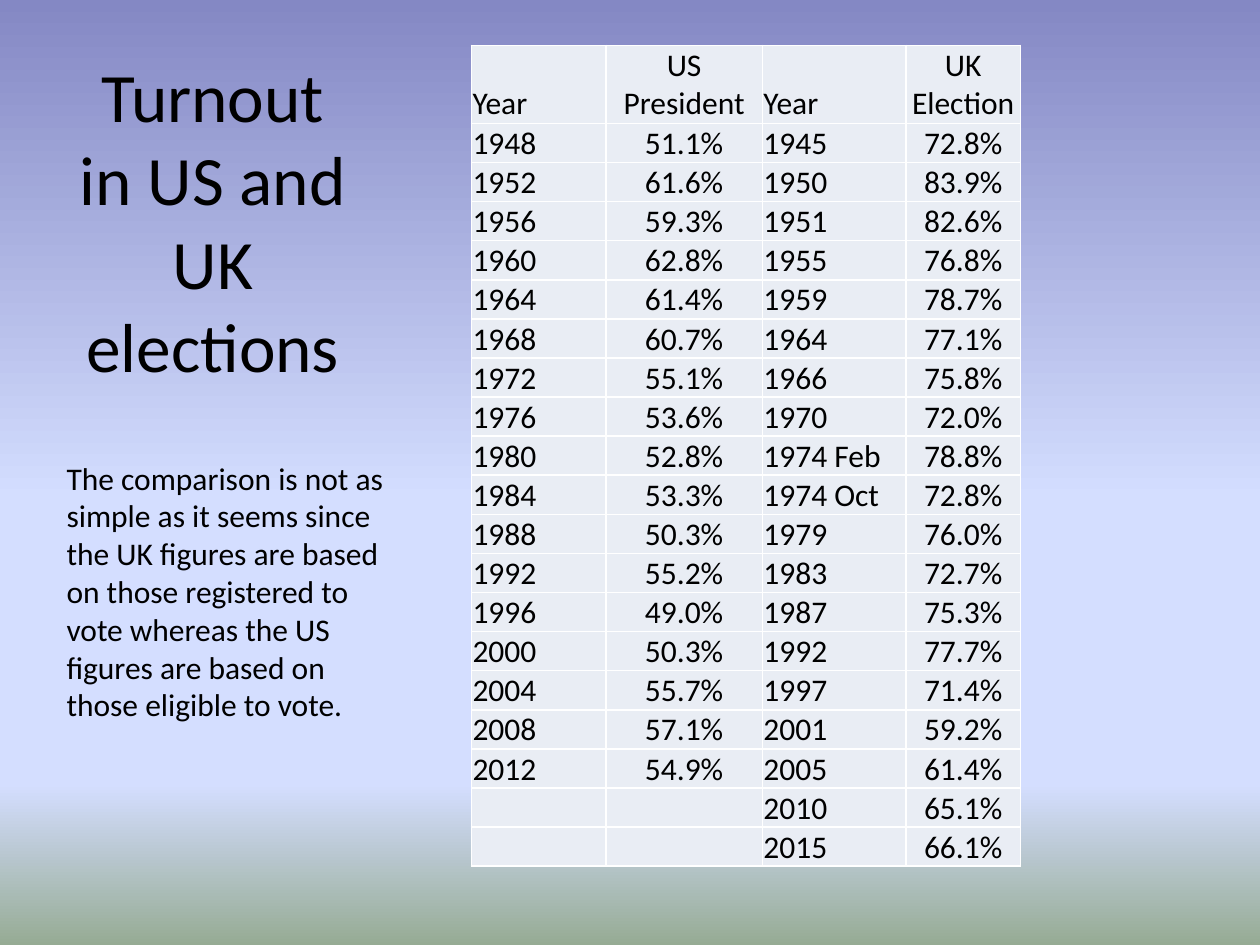
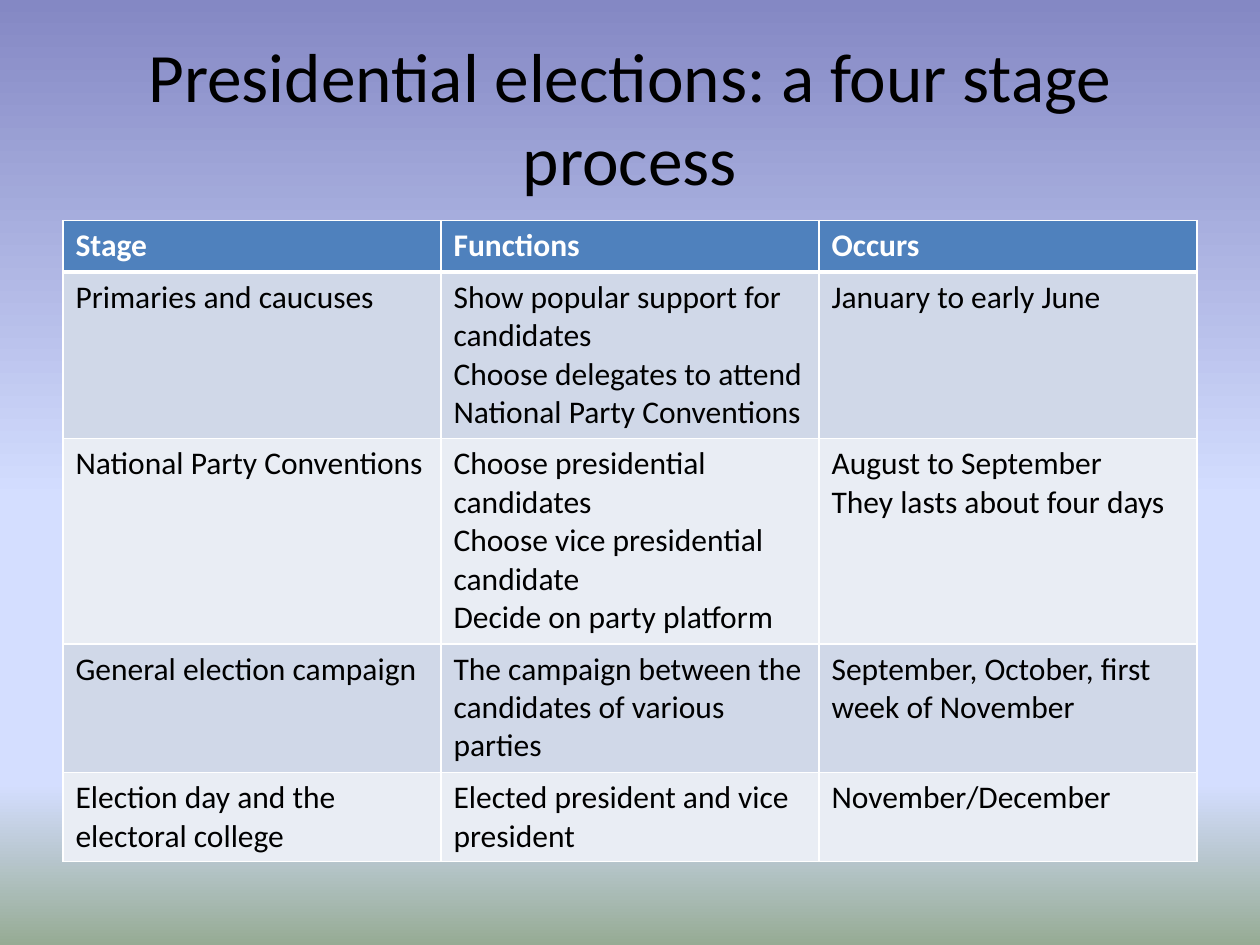
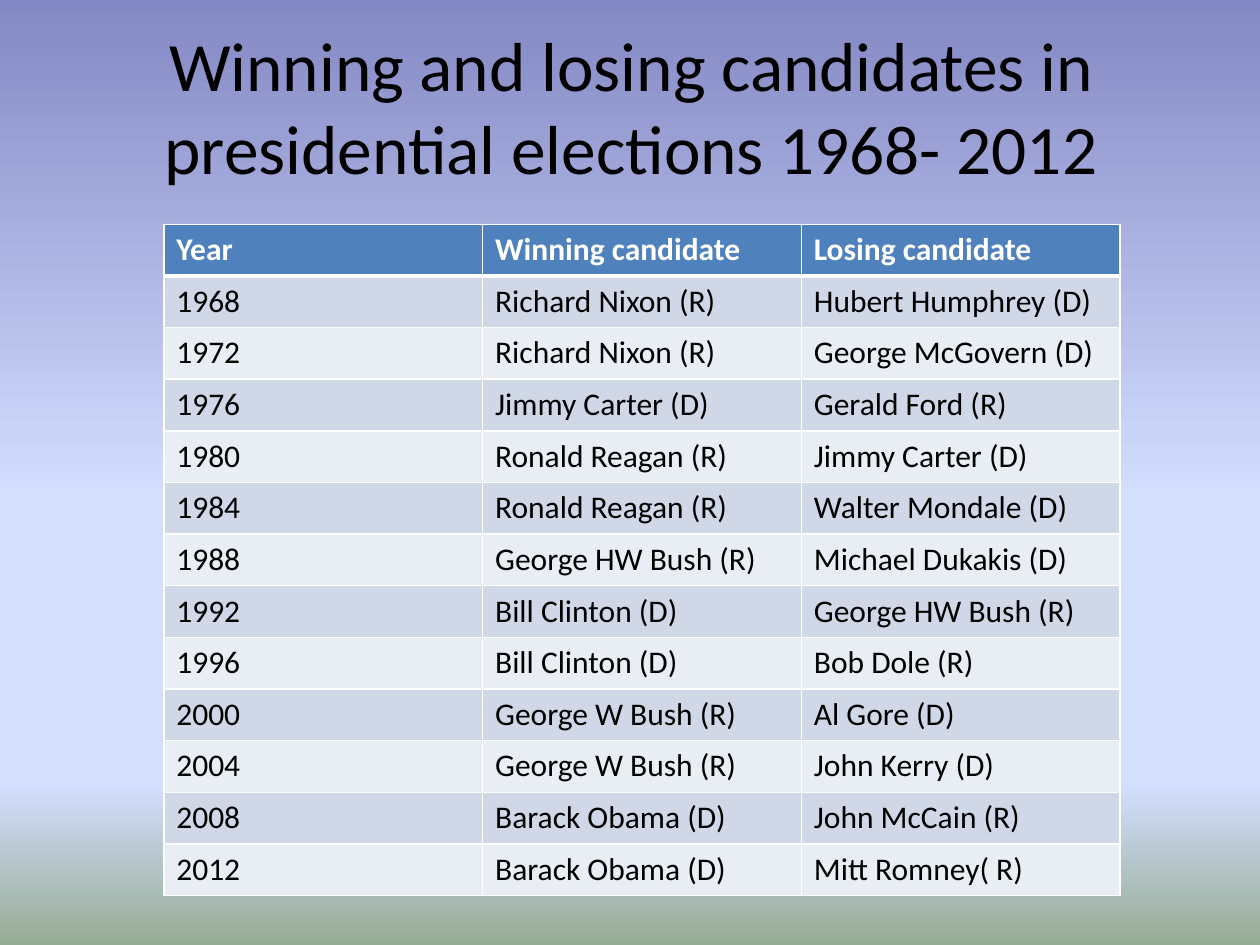
from lxml import etree
from pptx import Presentation
from pptx.dml.color import RGBColor
from pptx.enum.text import MSO_ANCHOR, PP_ALIGN
from pptx.oxml.ns import qn
from pptx.util import Inches, Pt

LEFT, CENTER = PP_ALIGN.LEFT, PP_ALIGN.CENTER
TOP, MIDDLE, BOTTOM = MSO_ANCHOR.TOP, MSO_ANCHOR.MIDDLE, MSO_ANCHOR.BOTTOM

FONT = "Calibri"
TITLE_SIZE, BODY_SIZE = 39.6, 18
BLACK, WHITE = "000000", "FFFFFF"
HEADER_FILL, DARK_BAND, LIGHT_BAND = "4F81BD", "D0D8E8", "E9EDF4"
SKY = [(0, "8488C4"), (53, "D4DEFF"), (83, "D4DEFF"), (100, "96AB94")]

TURNOUT_TITLE = "Turnout in US and UK elections"
TURNOUT_NOTE = (
    "The comparison is not as simple as it seems since the UK figures are based "
    "on those registered to vote whereas the US figures are based on those "
    "eligible to vote."
)
TURNOUT = [
    ("Year", "US President", "Year", "UK Election"),
    ("1948", "51.1%", "1945", "72.8%"),
    ("1952", "61.6%", "1950", "83.9%"),
    ("1956", "59.3%", "1951", "82.6%"),
    ("1960", "62.8%", "1955", "76.8%"),
    ("1964", "61.4%", "1959", "78.7%"),
    ("1968", "60.7%", "1964", "77.1%"),
    ("1972", "55.1%", "1966", "75.8%"),
    ("1976", "53.6%", "1970", "72.0%"),
    ("1980", "52.8%", "1974 Feb", "78.8%"),
    ("1984", "53.3%", "1974 Oct", "72.8%"),
    ("1988", "50.3%", "1979", "76.0%"),
    ("1992", "55.2%", "1983", "72.7%"),
    ("1996", "49.0%", "1987", "75.3%"),
    ("2000", "50.3%", "1992", "77.7%"),
    ("2004", "55.7%", "1997", "71.4%"),
    ("2008", "57.1%", "2001", "59.2%"),
    ("2012", "54.9%", "2005", "61.4%"),
    ("", "", "2010", "65.1%"),
    ("", "", "2015", "66.1%"),
]

STAGES_TITLE = "Presidential elections: a four stage process"
STAGES = [
    ("Stage", "Functions", "Occurs"),
    (
        "Primaries and caucuses",
        "Show popular support for candidates\n"
        "Choose delegates to attend National Party Conventions",
        "January to early June",
    ),
    (
        "National Party Conventions",
        "Choose presidential candidates\n"
        "Choose vice presidential candidate\n"
        "Decide on party platform",
        "August to September\nThey lasts about four days",
    ),
    (
        "General election campaign",
        "The campaign between the candidates of various parties",
        "September, October, first week of November",
    ),
    (
        "Election day and the electoral college",
        "Elected president and vice president",
        "November/December",
    ),
]

CANDIDATES_TITLE = "Winning and losing candidates in presidential elections 1968- 2012"
CANDIDATES = [
    ("Year", "Winning candidate", "Losing candidate"),
    ("1968", "Richard Nixon (R)", "Hubert Humphrey (D)"),
    ("1972", "Richard Nixon (R)", "George McGovern (D)"),
    ("1976", "Jimmy Carter (D)", "Gerald Ford (R)"),
    ("1980", "Ronald Reagan (R)", "Jimmy Carter (D)"),
    ("1984", "Ronald Reagan (R)", "Walter Mondale (D)"),
    ("1988", "George HW Bush (R)", "Michael Dukakis (D)"),
    ("1992", "Bill Clinton (D)", "George HW Bush (R)"),
    ("1996", "Bill Clinton (D)", "Bob Dole (R)"),
    ("2000", "George W Bush (R)", "Al Gore (D)"),
    ("2004", "George W Bush (R)", "John Kerry (D)"),
    ("2008", "Barack Obama (D)", "John McCain (R)"),
    ("2012", "Barack Obama (D)", "Mitt Romney( R)"),
]


def color(value):
    return RGBColor.from_string(value)


def paint_background(master):
    """Give every slide the shared four-stop vertical gradient."""
    fill = master.background.fill
    fill.gradient()
    fill.gradient_angle = 270
    stops = next(master.element.iter(qn("a:gsLst")))
    for stop in list(stops):
        stops.remove(stop)
    for percent, value in SKY:
        stop = etree.SubElement(stops, qn("a:gs"), pos=str(percent * 1000))
        etree.SubElement(stop, qn("a:srgbClr"), val=value)


def write(frame, text, size=BODY_SIZE, ink=BLACK, bold=False, align=LEFT):
    frame.text = text
    frame.word_wrap = True
    for para in frame.paragraphs:
        para.alignment = align
        para.font.name = FONT
        para.font.size = Pt(size)
        para.font.bold = bold
        para.font.color.rgb = color(ink)


def add_text(page, place, text, anchor=TOP, **style):
    box = page.shapes.add_textbox(*map(Inches, place))
    box.text_frame.vertical_anchor = anchor
    write(box.text_frame, text, **style)


def add_title(page, place, text):
    add_text(page, place, text, anchor=MIDDLE, size=TITLE_SIZE, align=CENTER)


def set_borders(cell, widths):
    """Draw white borders; widths are points for left, right, top, bottom."""
    properties = cell._tc.get_or_add_tcPr()
    for side, width in zip("LRTB", widths):
        line = etree.SubElement(properties, qn(f"a:ln{side}"), w=str(Pt(width)))
        fill = etree.SubElement(line, qn("a:solidFill"))
        etree.SubElement(fill, qn("a:srgbClr"), val=WHITE)


def add_grid(page, left, top, rows, widths, heights):
    """Add a table and return it with its cells still unstyled."""
    frame = page.shapes.add_table(
        len(rows), len(widths), Inches(left), Inches(top),
        Inches(sum(widths)), Inches(sum(heights)),
    )
    table = frame.table
    for column, width in zip(table.columns, widths):
        column.width = Inches(width)
    for row, height in zip(table.rows, heights):
        row.height = Inches(height)
    return table


def add_turnout_table(page):
    heights = [0.62] + [0.31] * (len(TURNOUT) - 1)
    table = add_grid(page, 3.74, 0.36, TURNOUT, [1.07, 1.24, 1.14, 0.91], heights)
    table.first_row = table.horz_banding = False
    for row, texts in enumerate(TURNOUT):
        for column, text in enumerate(texts):
            cell = table.cell(row, column)
            cell.margin_left = cell.margin_right = cell.margin_top = Inches(0.01)
            cell.margin_bottom = 0
            cell.vertical_anchor = BOTTOM
            write(cell.text_frame, text, align=CENTER if column % 2 else LEFT)
            set_borders(cell, (1, 1, 1, 1))
            cell.fill.solid()
            cell.fill.fore_color.rgb = color(LIGHT_BAND)


def add_banded_table(page, left, top, rows, widths, heights):
    table = add_grid(page, left, top, rows, widths, heights)
    for row, texts in enumerate(rows):
        header = row == 0
        band = HEADER_FILL if header else DARK_BAND if row % 2 else LIGHT_BAND
        for column, text in enumerate(texts):
            cell = table.cell(row, column)
            write(cell.text_frame, text, ink=WHITE if header else BLACK, bold=header)
            set_borders(cell, (1, 1, 3 if row == 1 else 1, 3 if header else 1))
            cell.fill.solid()
            cell.fill.fore_color.rgb = color(band)


def main():
    deck = Presentation()
    deck.slide_width, deck.slide_height = Inches(10), Inches(7.5)
    paint_background(deck.slide_master)
    blank = deck.slide_layouts[6]

    page = deck.slides.add_slide(blank)
    add_title(page, (0.51, 0.13, 2.36, 3.23), TURNOUT_TITLE)
    add_turnout_table(page)
    add_text(page, (0.43, 3.59, 2.83, 2.22), TURNOUT_NOTE)

    page = deck.slides.add_slide(blank)
    add_title(page, (0.5, 0.3, 9, 1.25), STAGES_TITLE)
    add_banded_table(page, 0.5, 1.75, STAGES, [3] * 3, [0.41, 1.32, 1.63, 1.02, 0.71])

    page = deck.slides.add_slide(blank)
    add_title(page, (0.51, 0.21, 9, 1.25), CANDIDATES_TITLE)
    add_banded_table(page, 1.3, 1.78, CANDIDATES, [2.53] * 3, [0.41] * len(CANDIDATES))

    deck.save("out.pptx")


if __name__ == "__main__":
    main()
